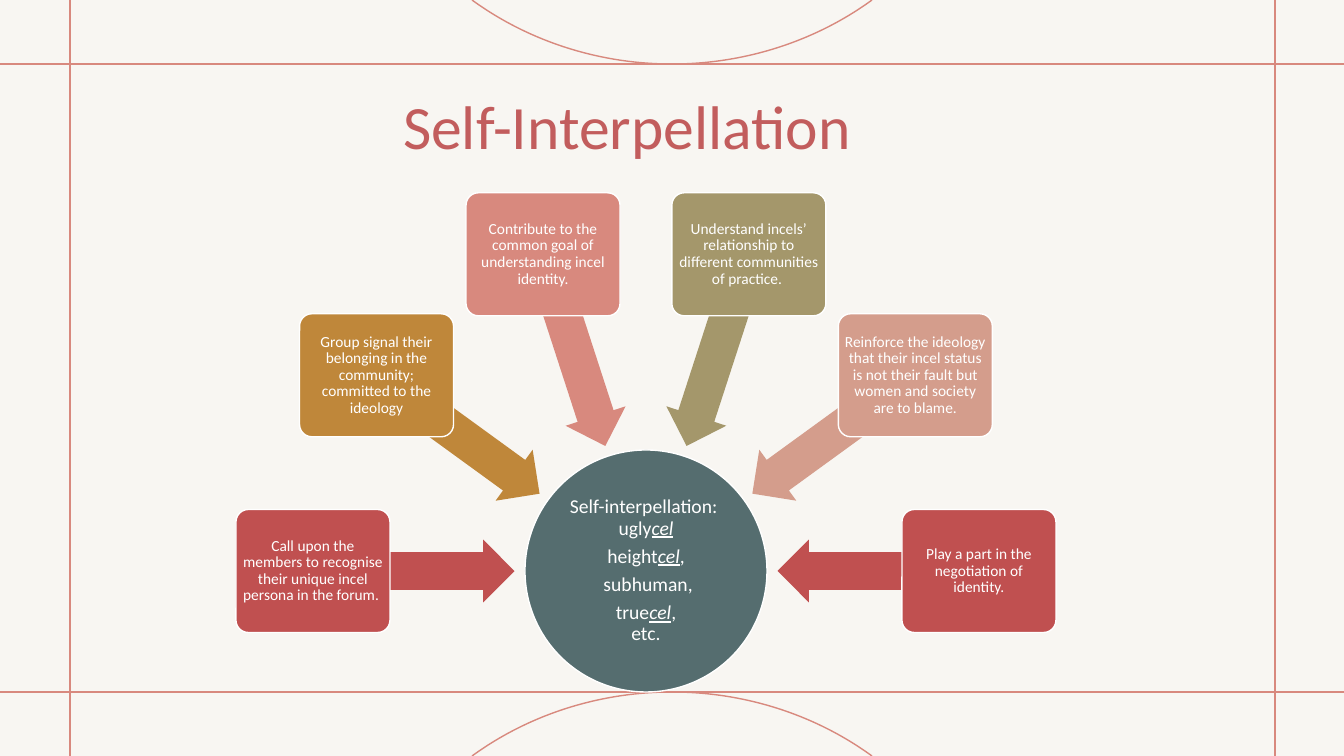
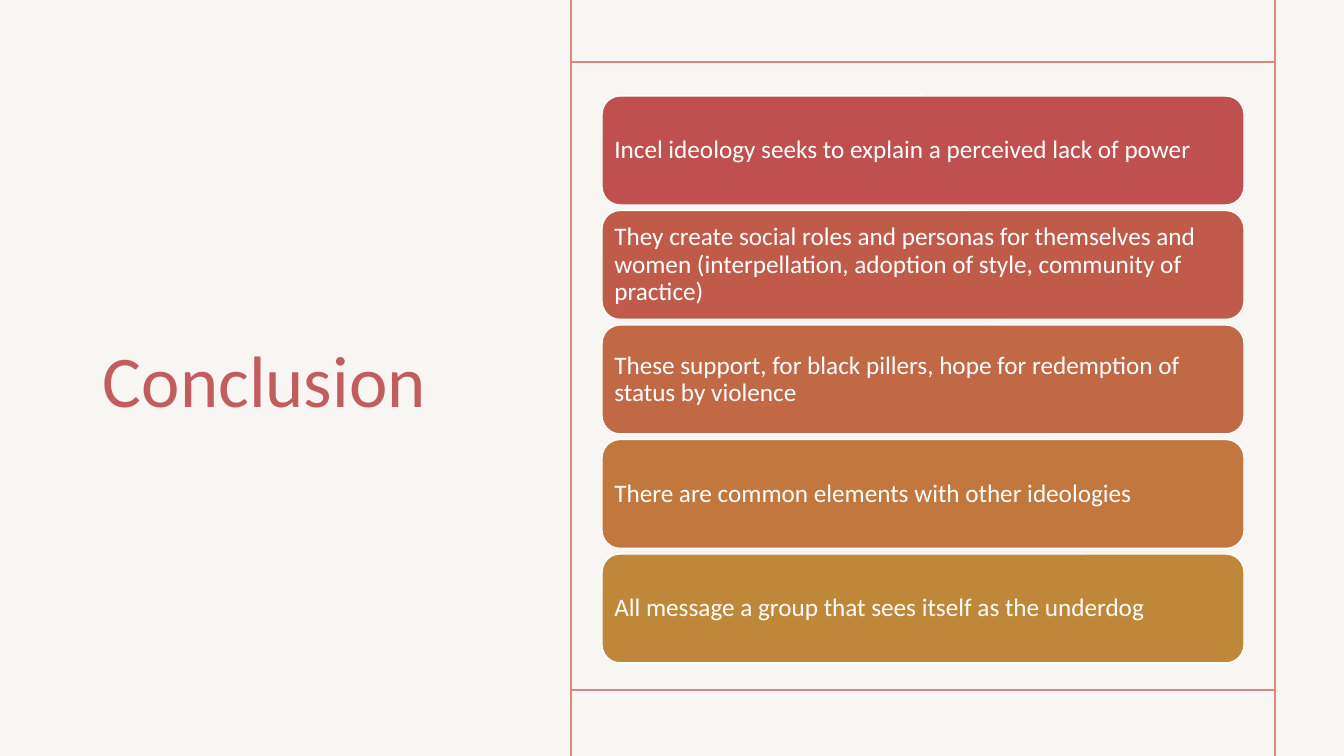
from copy import deepcopy
from math import cos, radians, sin

from lxml import etree
from pptx import Presentation
from pptx.dml.color import RGBColor
from pptx.enum.shapes import MSO_CONNECTOR, MSO_SHAPE
from pptx.enum.text import MSO_ANCHOR, MSO_AUTO_SIZE, PP_ALIGN
from pptx.oxml.ns import qn
from pptx.util import Pt

STRAIGHT = MSO_CONNECTOR.STRAIGHT
RECTANGLE, ROUNDED = MSO_SHAPE.RECTANGLE, MSO_SHAPE.ROUNDED_RECTANGLE
ELLIPSE, ARROW = MSO_SHAPE.OVAL, MSO_SHAPE.LEFT_ARROW
LEFT, CENTER = PP_ALIGN.LEFT, PP_ALIGN.CENTER
MIDDLE = MSO_ANCHOR.MIDDLE

PX = 9071  # EMU per px, 100.8 px to the inch
WIDTH, HEIGHT = 1344, 756
FONT = "Calibri"
PAPER, ROSE, TITLE, WHITE = "F8F6F2", "D8897E", "C25D5D", "FFFFFF"
RED, OCHRE, OLIVE, BLUSH, TEAL = "C05050", "BF873A", "A4976B", "D49D8C", "556D6F"
rgb = RGBColor.from_string


def write(shape, text, size, color=WHITE, align=CENTER, margin=3, spacing=0.9):
    """Fill a shape with text: one paragraph per list item, *emphasis* between stars."""
    frame = shape.text_frame
    frame.word_wrap = True
    frame.auto_size = MSO_AUTO_SIZE.NONE
    frame.vertical_anchor = MIDDLE
    frame.margin_left = frame.margin_right = margin * PX
    frame.margin_top = frame.margin_bottom = margin * PX
    for number, content in enumerate(text):
        paragraph = frame.add_paragraph() if number else frame.paragraphs[0]
        paragraph.alignment = align
        paragraph.line_spacing = spacing
        paragraph.space_before = Pt(0)
        paragraph.space_after = Pt(round(size * 0.35)) if number < len(text) - 1 else Pt(0)
        for part_number, part in enumerate(content.split("*")):
            for line_number, line in enumerate(part.split("\n")):
                if line_number:
                    # The break takes the format of the run before it
                    paragraph._p.add_br().append(deepcopy(run._r.rPr))
                if not line:
                    continue
                run = paragraph.add_run()
                run.text = line
                run.font.name = FONT
                run.font.size = Pt(size)
                run.font.color.rgb = rgb(color)
                if part_number % 2:
                    run.font.italic = run.font.underline = True


def add_block(slide, kind, center, size, fill, outlined=True, adjustments=()):
    """Add a filled shape around a centre point."""
    (x, y), (width, height) = center, size
    left, top = round((x - width / 2) * PX), round((y - height / 2) * PX)
    shape = slide.shapes.add_shape(kind, left, top, width * PX, height * PX)
    shape.shadow.inherit = False
    shape.fill.solid()
    shape.fill.fore_color.rgb = rgb(fill)
    if outlined:
        shape.line.color.rgb = rgb(WHITE)
        shape.line.width = Pt(1)
    else:
        shape.line.fill.background()
    for index, value in enumerate(adjustments):
        shape.adjustments[index] = value
    return shape


presentation = Presentation()
presentation.slide_width, presentation.slide_height = WIDTH * PX, HEIGHT * PX

# Paper, titles and frame lines of both slides
pages = [
    ("Self-Interpellation", 44, (393, 52, 1033, 146),
     [(0, 692, WIDTH, 692), (0, 64, WIDTH, 64), (1275, HEIGHT, 1275, 0), (70, HEIGHT, 70, 0)]),
    ("Conclusion", 52, (93, 64, 450, 628),
     [(571, 62, 1276, 62), (571, 690, 1276, 690), (571, 0, 571, HEIGHT), (1275, 0, 1275, HEIGHT)]),
]
slides = []
for title_text, title_size, box, frame_lines in pages:
    slide = presentation.slides.add_slide(presentation.slide_layouts[5])
    slides.append(slide)
    title = slide.shapes.title
    title.left, title.top, title.width, title.height = [length * PX for length in box]
    write(title, [title_text], title_size, TITLE, LEFT, margin=10, spacing=1.0)
    paper = add_block(slide, RECTANGLE, (WIDTH / 2, HEIGHT / 2), (WIDTH, HEIGHT), PAPER,
                      outlined=False)
    title._element.addprevious(paper._element)
    for ends in frame_lines:
        line = slide.shapes.add_connector(STRAIGHT, *[length * PX for length in ends])
        line.line.color.rgb = rgb(ROSE)
        line.line.width = Pt(1)
        etree.SubElement(line._element.spPr, qn("a:effectLst"))
wheel_slide, conclusion_slide = slides

# Arcs touching the upper and lower frame lines, each of two Bézier curves
top_arc = [(472, 0), (527, 40), (597, 64), (672, 64), (747, 64), (817, 40), (872, 0)]
bottom_arc = [(x, HEIGHT - y) for x, y in top_arc]
for arc in (top_arc, bottom_arc):
    points = [(x * PX, y * PX) for x, y in arc]
    builder = wheel_slide.shapes.build_freeform(*points[0])
    builder.add_line_segments(points[1:], close=False)
    curve = builder.convert_to_shape()
    segments = list(curve._element.iter(qn("a:lnTo")))
    for first in range(0, len(segments), 3):
        bezier = etree.SubElement(segments[first].getparent(), qn("a:cubicBezTo"))
        for segment in segments[first:first + 3]:
            bezier.append(segment[0])
            segment.getparent().remove(segment)
    curve.shadow.inherit = False
    curve.fill.background()
    curve.line.color.rgb = rgb(ROSE)
    curve.line.width = Pt(1)

# Hub of the wheel
HUB = (646, 571)
hub = add_block(wheel_slide, ELLIPSE, HUB, (242, 242), TEAL)
write(hub, ["Self-interpellation: \nugly*cel*", "height*cel*,", " subhuman,", "true*cel*,\netc."],
      14, margin=1)

# Cards on a half circle, each with an arrow to the hub
CARD_DISTANCE, ARROW_DISTANCE = 333, 232
cards = [
    (RED, "Call upon the members to recognise their unique incel persona in the forum. "),
    (OCHRE, "Group signal their belonging in the community; committed to the ideology"),
    (ROSE, "Contribute to the common goal of understanding incel identity."),
    (OLIVE, "Understand incels’ relationship to different communities of practice. "),
    (BLUSH, "Reinforce the ideology that their incel status is not their fault but "
            "women and society are to blame."),
    (RED, "Play a part in the negotiation of identity."),
]
for index, (color, text) in enumerate(cards):
    angle = 180 + index * 180 / (len(cards) - 1)
    arrow_center, card_center = [
        (HUB[0] + distance * cos(radians(angle)), HUB[1] + distance * sin(radians(angle)))
        for distance in (ARROW_DISTANCE, CARD_DISTANCE)]
    arrow = add_block(wheel_slide, ARROW, arrow_center, (201, 63), color,
                      outlined=False, adjustments=(0.6, 0.5))
    arrow.rotation = angle % 360
    card = add_block(wheel_slide, ROUNDED, card_center, (154, 123), color, adjustments=(0.1,))
    write(card, [text], 11)

# Stacked conclusions, spread evenly over the height of the stack
STACK_TOP, STACK_HEIGHT, BAR_HEIGHT = 96, 567, 109
conclusions = [
    (RED, "Incel ideology seeks to explain a perceived lack of power"),
    ("C05B4A", "They create social roles and personas for themselves and women "
               "(interpellation, adoption of style, community of practice)"),
    ("C16844", "These support, for black pillers, hope for redemption of status by violence"),
    ("C1773D", "There are common elements with other ideologies"),
    (OCHRE, "All message a group that sees itself as the underdog"),
]
bar_pitch = (STACK_HEIGHT - BAR_HEIGHT) / (len(conclusions) - 1)
for index, (color, text) in enumerate(conclusions):
    middle = STACK_TOP + BAR_HEIGHT / 2 + index * bar_pitch
    bar = add_block(conclusion_slide, ROUNDED, (923, middle), (642, BAR_HEIGHT), color)
    write(bar, [text], 18, align=LEFT, margin=7)

presentation.save("out.pptx")
